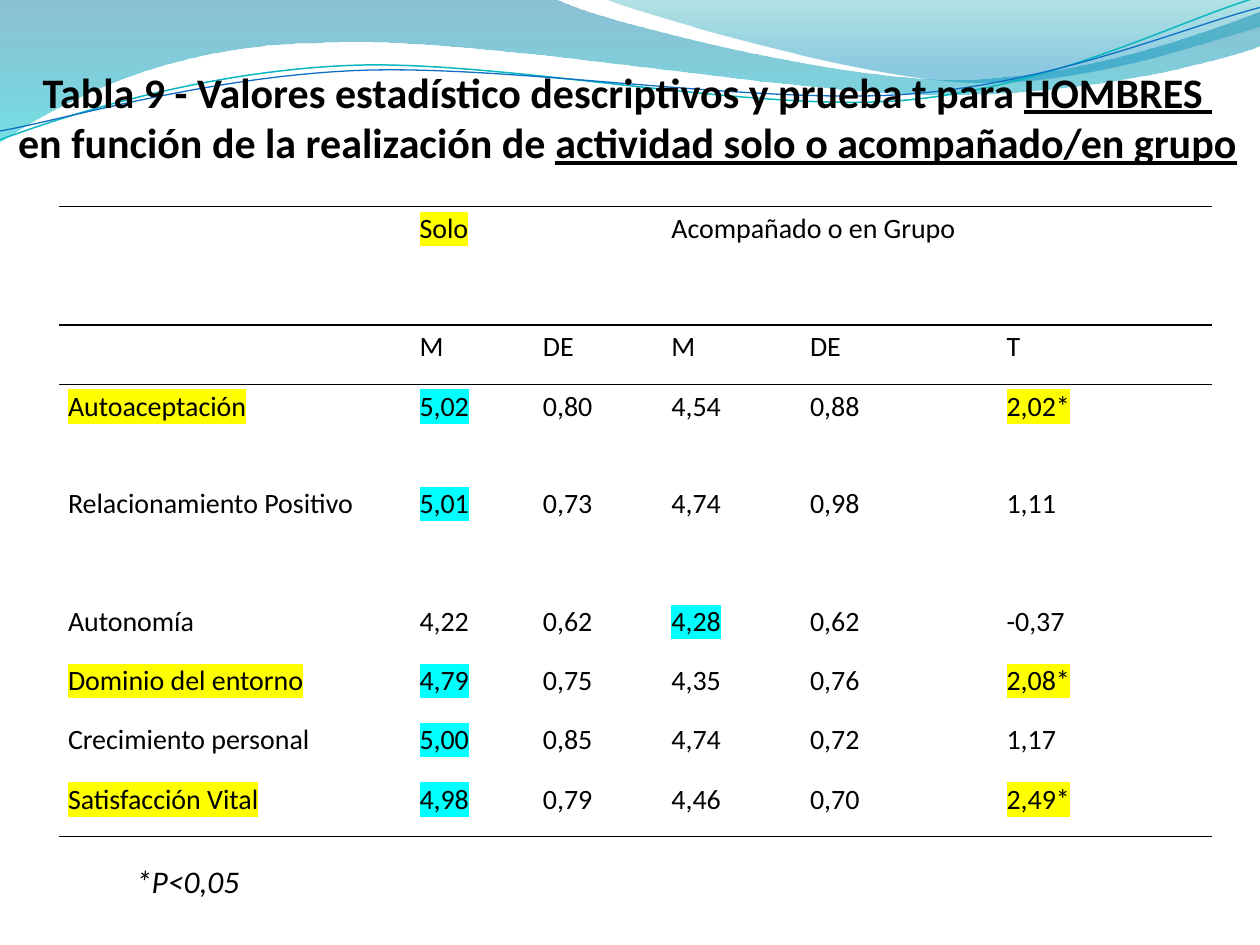
import math

from lxml import etree
from pptx import Presentation
from pptx.dml.color import RGBColor
from pptx.enum import text
from pptx.oxml import ns
from pptx.util import Inches, Pt

THEME = {
    "font": "Calibri", "ink": "000000",
    "yellow": "FFFF00", "cyan": "00FFFF",
    "title": 24, "body": 16, "note": 18,
}

prs = Presentation()
prs.slide_width, prs.slide_height = Inches(10), Inches(7.5)
s = prs.slides.add_slide(prs.slide_layouts[5])


def add_run(p, words, size, bold=False, italic=False, underline=False, mark=None):
    r = p.add_run()
    r.text = words
    f = r.font
    f.name, f.size = THEME["font"], Pt(size)
    f.bold, f.italic, f.underline = bold, italic, underline
    f.color.rgb = RGBColor.from_string(THEME["ink"])
    if mark:
        hl = etree.Element(ns.qn("a:highlight"))
        etree.SubElement(hl, ns.qn("a:srgbClr"), val=THEME[mark])
        r._r.rPr.find(ns.qn("a:solidFill")).addnext(hl)


def add_wave(pieces, closed):
    """Each piece ends in an anchor; two control points before it make it a curve."""
    pieces = [[(Inches(x), Inches(y)) for x, y in piece] for piece in pieces]
    anchors = [piece[-1] for piece in pieces]
    fb = s.shapes.build_freeform(*anchors[0], scale=1.0)
    fb.add_line_segments(anchors[1:], close=closed)
    sp = fb.convert_to_shape()
    sp.shadow.inherit = False
    segments = list(sp._element.iter(ns.qn("a:lnTo")))
    for segment, piece in zip(segments, pieces[1:]):
        if len(piece) == 3:
            curve = etree.Element(ns.qn("a:cubicBezTo"))
            for x, y in piece:
                etree.SubElement(curve, ns.qn("a:pt"), x=str(x - sp.left), y=str(y - sp.top))
            segment.getparent().replace(segment, curve)
    return sp


# Gradient waves: outline, then (colour, position, opacity) stops
bands = [
    ([[(0, -0.01)], [(4.4, -0.01)],
      [(4.76, 0.17), (6.64, 0.63), (7.58, 0.63)],
      [(8.53, 0.63), (9.58, 0.26), (10, 0.09)], [(10.01, 0.36)],
      [(9.83, 0.44), (8.7, 0.76), (7.46, 0.75)],
      [(6.22, 0.75), (3.82, 0.28), (2.57, 0.34)],
      [(1.29, 0.35), (0.46, 0.83), (-0.01, 1.13)]],
     [("0074A1", 0, 45), ("00C6CF", 1, 55)]),
    ([[(4.79, -0.01)],
      [(5.09, 0.11), (6.82, 0.62), (7.69, 0.65)],
      [(8.56, 0.69), (9.61, 0.32), (10, 0.21)], [(10, 0)]],
     [("00A1A9", 0, 30), ("008BBF", 0.8, 45)]),
]
for outline, stops in bands:
    sp = add_wave(outline, True)
    sp.line.fill.background()
    sp.fill.gradient()
    sp.fill.gradient_angle = 270
    for stop, (color, pos, opacity) in zip(sp.fill.gradient_stops, stops):
        stop.color.rgb = RGBColor.from_string(color)
        stop.position = pos
        clr = stop._gs.find(ns.qn("a:srgbClr"))
        etree.SubElement(clr, ns.qn("a:alpha"), val=str(opacity * 1000))

# Thin wave lines, levelled about their centre and then tilted as shapes
TILT = 2.7
cos, sin = math.cos(math.radians(TILT)), math.sin(math.radians(TILT))
cx, cy = 5, 0.58
strands = [
    ([[(0, 1.11)], [(0.48, 0.93), (1.58, 0.57), (2.77, 0.52)],
      [(3.95, 0.47), (5.93, 0.89), (7.13, 0.8)],
      [(8.33, 0.71), (9.38, 0.15), (9.98, -0.02)]], "0AB8BF", 0.85),
    ([[(0, 1.04)], [(0.47, 0.96), (1.64, 0.61), (2.83, 0.56)],
      [(4.03, 0.51), (5.97, 0.83), (7.17, 0.75)],
      [(8.36, 0.67), (9.41, 0.21), (10, 0.06)]], "0F6FC6", 0.75),
]
for outline, color, width in strands:
    level = [[(cx + (x - cx) * cos - (y - cy) * sin, cy + (x - cx) * sin + (y - cy) * cos)
              for x, y in piece] for piece in outline]
    sp = add_wave(level, False)
    sp.rotation = 360 - TILT
    sp.fill.background()
    sp.line.color.rgb = RGBColor.from_string(color)
    sp.line.width = Pt(width)

# Title, brought in front of the waves
title = s.shapes.title
s.shapes._spTree.append(title._element)
title.left, title.top, title.width, title.height = 0, Inches(0.47), Inches(9.96), Inches(0.91)
tf = title.text_frame
tf.auto_size, tf.word_wrap = text.MSO_AUTO_SIZE.NONE, False
tf.vertical_anchor = text.MSO_ANCHOR.MIDDLE
lines = [
    ("Tabla 9 - Valores estadístico descriptivos y prueba t para ", "HOMBRES "),
    ("en función de la realización de ", "actividad solo o acompañado/en grupo"),
]
for i, (plain, underlined) in enumerate(lines):
    p = tf.add_paragraph() if i else tf.paragraphs[0]
    p.alignment = text.PP_ALIGN.CENTER
    add_run(p, plain, THEME["title"], bold=True)
    add_run(p, underlined, THEME["title"], bold=True, underline=True)

# Footnote
tf = s.shapes.add_textbox(Inches(0.55), Inches(6.79), Inches(1.88), Inches(0.71)).text_frame
tf.word_wrap = True
p = tf.paragraphs[0]
p.alignment = text.PP_ALIGN.CENTER
add_run(p, "*P<0,05", THEME["note"], italic=True)

# Table: column widths in inches, row heights in units of one row
cols = [2.79, 0.98, 1.02, 1.1, 1.56, 1.7]
rows = [2, 1, 1.64, 2, 1, 1, 1, 1]
unit = 0.47
data = [
    ["", "Solo", "", "Acompañado o en Grupo", "", ""],
    ["", "M", "DE", "M", "DE", "T"],
    ["Autoaceptación", "5,02", "0,80", "4,54", "0,88", "2,02*"],
    ["Relacionamiento Positivo", "5,01", "0,73", "4,74", "0,98", "1,11"],
    ["Autonomía", "4,22", "0,62", "4,28", "0,62", "-0,37"],
    ["Dominio del entorno", "4,79", "0,75", "4,35", "0,76", "2,08*"],
    ["Crecimiento personal", "5,00", "0,85", "4,74", "0,72", "1,17"],
    ["Satisfacción Vital", "4,98", "0,79", "4,46", "0,70", "2,49*"],
]
tbl = s.shapes.add_table(len(rows), len(cols), Inches(0.47), Inches(1.64),
                         Inches(sum(cols)), Inches(unit * sum(rows))).table
tbl.first_row = tbl.horz_banding = False
NO_STYLE = "{2D5ABB26-0587-4C30-8999-92F81FD0307C}"
tbl._tbl.tblPr.find(ns.qn("a:tableStyleId")).text = NO_STYLE
for col, width in zip(tbl.columns, cols):
    col.width = Inches(width)
for row, height in zip(tbl.rows, rows):
    row.height = Inches(unit * height)
for c in (1, 3):
    tbl.cell(0, c).merge(tbl.cell(0, c + 1))

ruled = {0: ("lnT", "lnB"), 1: ("lnT", "lnB"), 2: ("lnT",), len(rows) - 1: ("lnB",)}
for i, values in enumerate(data):
    # The higher mean is cyan; significant rows and the first group are yellow
    significant = values[-1].endswith("*")
    higher = 0 if i < 2 else 1 if values[1] > values[3] else 3
    for j, value in enumerate(values):
        cell = tbl.cell(i, j)
        cell.margin_left = cell.margin_right = Inches(0.07)
        cell.margin_top = cell.margin_bottom = 0
        for side in ("lnL", "lnR", "lnT", "lnB"):
            ln = etree.SubElement(cell._tc.get_or_add_tcPr(), ns.qn("a:" + side), w=str(Pt(1)))
            if side in ruled.get(i, ()):
                fill = etree.SubElement(ln, ns.qn("a:solidFill"))
                etree.SubElement(fill, ns.qn("a:srgbClr"), val=THEME["ink"])
            else:
                etree.SubElement(ln, ns.qn("a:noFill"))
        cell.fill.background()
        if not value:
            continue
        p = cell.text_frame.paragraphs[0]
        p.alignment, p.line_spacing = text.PP_ALIGN.JUSTIFY, 1.15
        mark = None
        if value == "Solo" or significant and j in (0, len(cols) - 1):
            mark = "yellow"
        elif higher and j == higher:
            mark = "cyan"
        add_run(p, value, THEME["body"], mark=mark)

prs.save("out.pptx")
